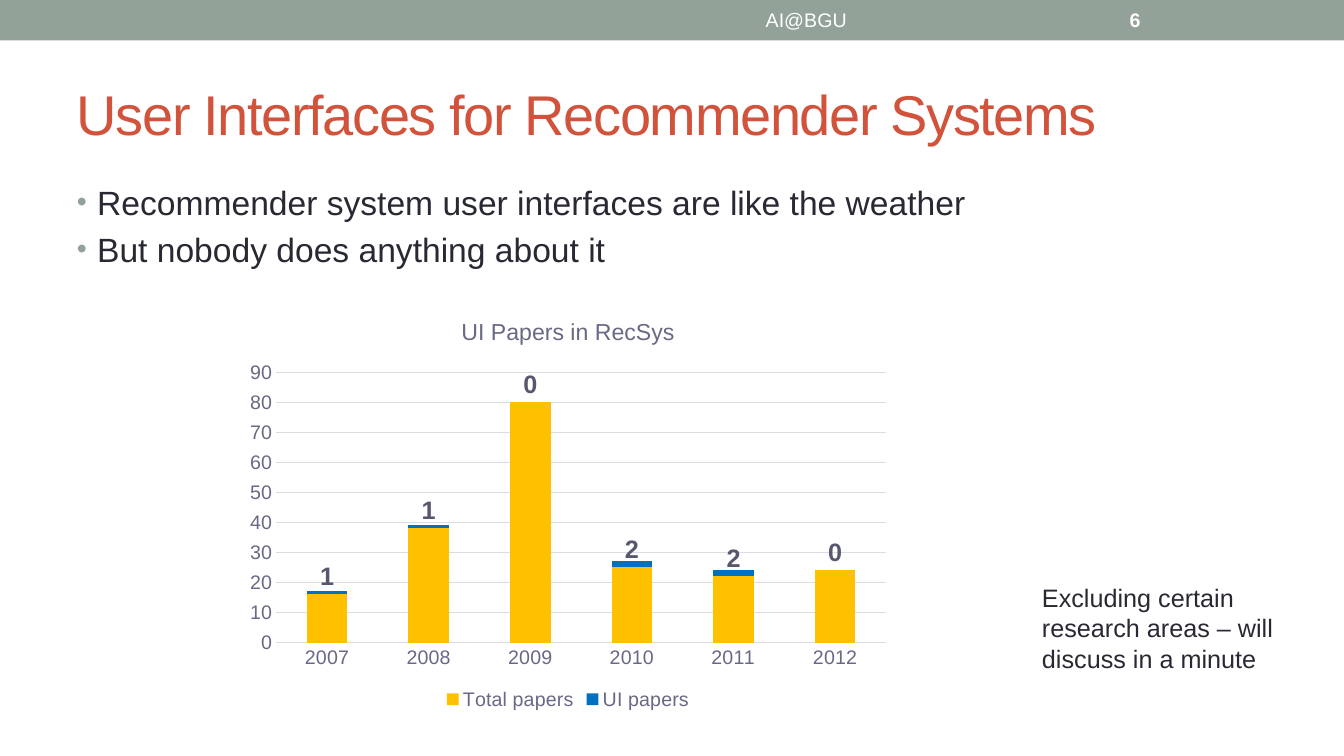
from dataclasses import dataclass

from lxml import etree
from pptx import Presentation
from pptx.chart import data
from pptx.dml import color
from pptx.enum import chart as charts, shapes, text
from pptx.oxml import ns
from pptx.util import Cm, Pt


@dataclass(frozen=True)
class Theme:
    font: str = "Arial"
    band: str = "93A299"
    title: str = "D2533C"
    ink: str = "292934"
    white: str = "FFFFFF"
    axis: str = "696986"
    grid: str = "DCDCE3"
    label: str = "57576E"
    total: str = "FFC000"
    ui: str = "0070C0"
    title_size: float = 40
    body_size: float = 24
    note_size: float = 18
    chart_title_size: float = 16.5
    small_size: float = 14


theme = Theme()


def style_font(font, size, rgb, bold=False):
    font.name = theme.font
    font.size = Pt(size)
    font.bold = bold
    font.color.rgb = color.RGBColor.from_string(rgb)


def add_text(box, lines, size, rgb, bold=False, anchor=text.MSO_ANCHOR.MIDDLE):
    shape = slide.shapes.add_textbox(*map(Cm, box))
    frame = shape.text_frame
    frame.word_wrap = True
    frame.vertical_anchor = anchor
    frame.text = "\n".join(lines)
    for paragraph in frame.paragraphs:
        for run in paragraph.runs:
            style_font(run.font, size, rgb, bold)
    return shape


presentation = Presentation()
presentation.slide_width = Cm(33.87)
presentation.slide_height = Cm(19.05)
slide = presentation.slides.add_slide(presentation.slide_layouts[6])

band = slide.shapes.add_shape(shapes.MSO_SHAPE.RECTANGLE, 0, 0, presentation.slide_width, Cm(1.02))
band.shadow.inherit = False
band.fill.solid()
band.fill.fore_color.rgb = color.RGBColor.from_string(theme.band)
band.line.fill.background()

title = add_text((1.69, 1.48, 30.48, 2.74), ["User Interfaces for Recommender Systems"],
                 theme.title_size, theme.title)
title.text_frame.paragraphs[0].runs[0].font._element.set("spc", "-100")

body = add_text((1.69, 4.45, 30.48, 13.54),
                ["Recommender system user interfaces are like the weather",
                 "But nobody does anything about it"],
                theme.body_size, theme.ink, anchor=text.MSO_ANCHOR.TOP)
for index, paragraph in enumerate(body.text_frame.paragraphs):
    properties = paragraph._p.get_or_add_pPr()
    properties.set("marL", str(Cm(0.51)))
    properties.set("indent", str(Cm(-0.51)))
    bullet_color = etree.SubElement(properties, ns.qn("a:buClr"))
    etree.SubElement(bullet_color, ns.qn("a:srgbClr"), val=theme.band)
    etree.SubElement(properties, ns.qn("a:buSzPct"), val="85000")
    etree.SubElement(properties, ns.qn("a:buFont"), typeface=theme.font)
    etree.SubElement(properties, ns.qn("a:buChar"), char="•")
    paragraph.space_before = Pt(0.2 * theme.body_size if index else 0)

add_text((26.01, 14.55, 6.68, 2.57),
         ["Excluding certain research areas – will discuss in a minute"],
         theme.note_size, theme.ink, anchor=text.MSO_ANCHOR.TOP)

footer = add_text((12.7, 0.05, 15.24, 0.91), ["AI@BGU"], theme.small_size, theme.white)
footer.text_frame.paragraphs[0].alignment = text.PP_ALIGN.CENTER
add_text((28.22, 0.05, 3.96, 0.91), ["6"], theme.small_size, theme.white, bold=True)

papers = data.CategoryChartData()
papers.categories = ["2007", "2008", "2009", "2010", "2011", "2012"]
papers.add_series("Total papers", (16, 38, 80, 25, 22, 24))
papers.add_series("UI papers", (1, 1, 0, 2, 2, 0))
chart = slide.shapes.add_chart(charts.XL_CHART_TYPE.COLUMN_STACKED,
                               Cm(5.97), Cm(7.54), Cm(16.69), Cm(10.46), papers).chart
style_font(chart.font, theme.small_size, theme.ink)
chart.has_title = True
chart.chart_title.include_in_layout = False
chart.chart_title.text_frame.text = "UI Papers in RecSys"
style_font(chart.chart_title.text_frame.paragraphs[0].runs[0].font,
           theme.chart_title_size, theme.axis)
chart.has_legend = True
chart.legend.position = charts.XL_LEGEND_POSITION.BOTTOM
chart.legend.include_in_layout = False
style_font(chart.legend.font, theme.small_size, theme.axis)

for axis in (chart.category_axis, chart.value_axis):
    axis.major_tick_mark = charts.XL_TICK_MARK.NONE
    axis.minor_tick_mark = charts.XL_TICK_MARK.NONE
    style_font(axis.tick_labels.font, theme.small_size, theme.axis)
chart.value_axis.format.line.fill.background()
for line in (chart.category_axis.format.line, chart.value_axis.major_gridlines.format.line):
    line.color.rgb = color.RGBColor.from_string(theme.grid)
    line.width = Pt(0.75)

plot = chart.plots[0]
plot.vary_by_categories = False
plot.gap_width = 150
plot.overlap = 100
for series, fill in zip(plot.series, (theme.total, theme.ui)):
    series.format.fill.solid()
    series.format.fill.fore_color.rgb = color.RGBColor.from_string(fill)

labels = plot.series[1].data_labels
labels.show_value = True
labels.position = charts.XL_LABEL_POSITION.INSIDE_BASE
style_font(labels.font, theme.note_size, theme.label, bold=True)

presentation.save("out.pptx")
